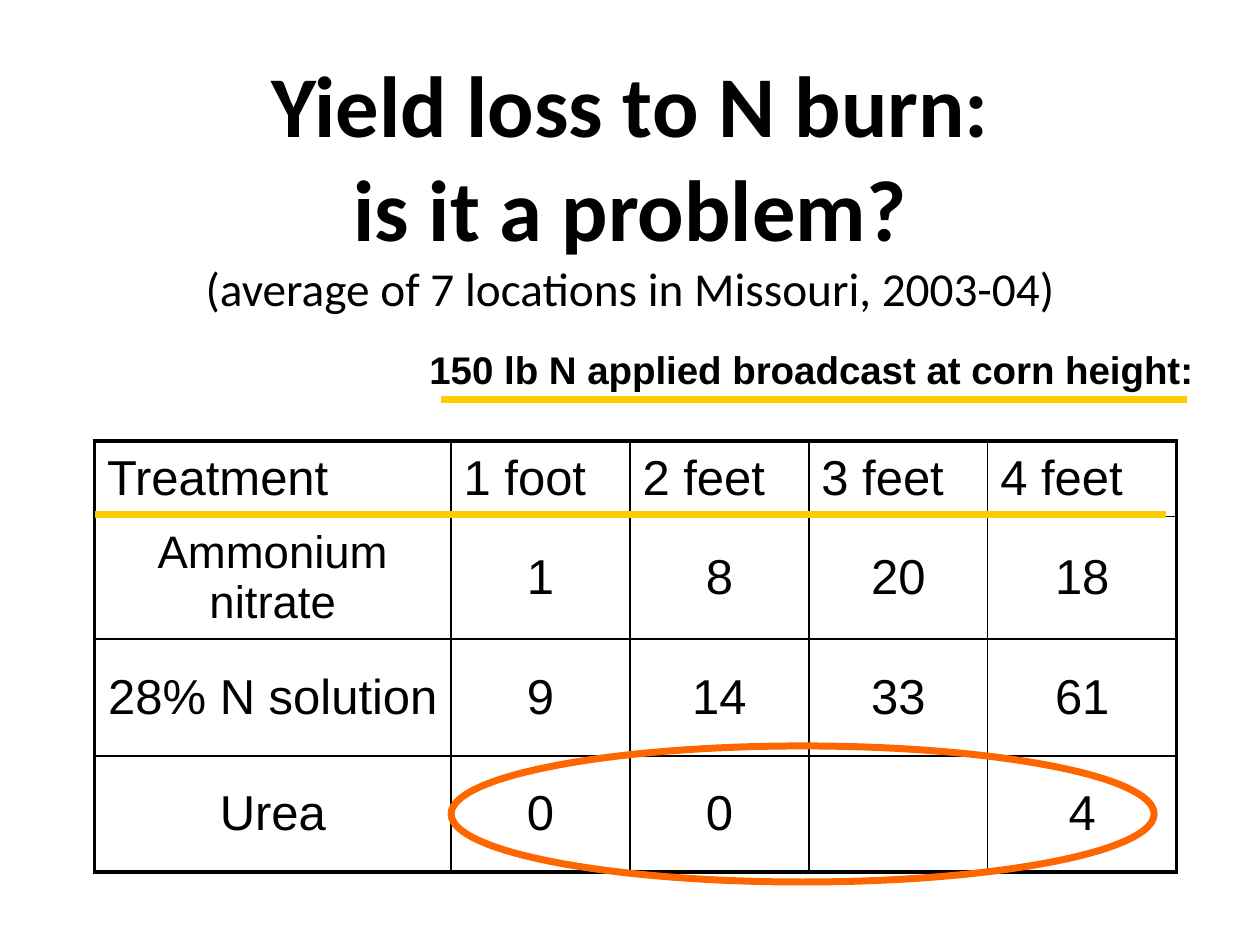
from dataclasses import dataclass

import pptx
import pptx.dml.color
import pptx.enum.shapes
import pptx.enum.text
import pptx.oxml
import pptx.oxml.ns
import pptx.util
from pptx.dml.color import RGBColor
from pptx.util import Inches

BLACK = RGBColor(0x00, 0x00, 0x00)
GOLD = RGBColor(0xFF, 0xCC, 0x00)
ORANGE = RGBColor(0xFF, 0x66, 0x00)
ACCENT_WIDTH = pptx.util.Pt(4)
OUTER_WIDTH, INNER_WIDTH = 2.25, 1
LEFT = pptx.enum.text.PP_ALIGN.LEFT
CENTER = pptx.enum.text.PP_ALIGN.CENTER
MIDDLE = pptx.enum.text.MSO_ANCHOR.MIDDLE

COLUMNS = (2.83, 1.42, 1.42, 1.42, 1.5)
ROWS = (0.6, 0.97, 0.93, 0.92)
YIELD_LOSS = (
    ("Treatment", "1 foot", "2 feet", "3 feet", "4 feet"),
    ("Ammonium nitrate", "1", "8", "20", "18"),
    ("28% N solution", "9", "14", "33", "61"),
    ("Urea", "0", "0", "", "4"),
)


@dataclass
class Rule:
    left: float
    right: float
    y: float


HEADER_RULE = Rule(0.75, 9.25, 4.08)
CAPTION_RULE = Rule(3.5, 9.42, 3.17)


def style_font(font, name: str, size: float, bold: bool = False) -> None:
    font.name = name
    font.size = pptx.util.Pt(size)
    font.bold = bold
    font.color.rgb = BLACK


def add_title(slide) -> None:
    s = slide.shapes.add_textbox(Inches(0.75), Inches(0.33), Inches(8.5), Inches(2.25))
    tf = s.text_frame
    tf.word_wrap = True
    tf.vertical_anchor = MIDDLE
    p = tf.paragraphs[0]
    p.alignment = CENTER
    for line in ("Yield loss to N burn:", "is it a problem?"):
        r = p.add_run()
        r.text = line
        style_font(r.font, "Calibri", 49.5, True)
        p.add_line_break()
    r = p.add_run()
    r.text = "(average of 7 locations in Missouri, 2003-04)"
    style_font(r.font, "Calibri", 27)


def add_caption(slide) -> None:
    s = slide.shapes.add_textbox(Inches(3.31), Inches(2.7), Inches(6.94), Inches(0.47))
    tf = s.text_frame
    tf.word_wrap = True
    p = tf.paragraphs[0]
    p.text = "150 lb N applied broadcast at corn height:"
    style_font(p.font, "Arial", 22, True)


def set_borders(cell, row: int, col: int) -> None:
    outer = {
        "lnL": col == 0,
        "lnR": col == len(COLUMNS) - 1,
        "lnT": row == 0,
        "lnB": row == len(ROWS) - 1,
    }
    props = cell._tc.get_or_add_tcPr()
    for index, (tag, is_outer) in enumerate(outer.items()):
        width = pptx.util.Pt(OUTER_WIDTH if is_outer else INNER_WIDTH)
        props.insert(index, pptx.oxml.parse_xml(
            f'<a:{tag} {pptx.oxml.ns.nsdecls("a")} w="{int(width)}">'
            f'<a:solidFill><a:srgbClr val="{BLACK}"/></a:solidFill></a:{tag}>'
        ))


def add_yield_table(slide) -> None:
    table = slide.shapes.add_table(
        len(ROWS), len(COLUMNS), Inches(0.75), Inches(3.5),
        Inches(sum(COLUMNS)), Inches(sum(ROWS)),
    ).table
    table.first_row = False
    table.horz_banding = False
    for column, width in zip(table.columns, COLUMNS):
        column.width = Inches(width)
    for row, height in zip(table.rows, ROWS):
        row.height = Inches(height)
    for i, values in enumerate(YIELD_LOSS):
        for j, value in enumerate(values):
            cell = table.cell(i, j)
            cell.vertical_anchor = MIDDLE
            cell.fill.background()
            set_borders(cell, i, j)
            p = cell.text_frame.paragraphs[0]
            p.text = value
            p.alignment = LEFT if i == 0 else CENTER
            style_font(p.font, "Arial", 26 if (i, j) == (1, 0) else 28)


def add_rule(slide, rule: Rule) -> None:
    s = slide.shapes.add_connector(
        pptx.enum.shapes.MSO_CONNECTOR.STRAIGHT,
        Inches(rule.left), Inches(rule.y), Inches(rule.right), Inches(rule.y),
    )
    s.line.color.rgb = GOLD
    s.line.width = ACCENT_WIDTH
    s._element.spPr.append(
        pptx.oxml.parse_xml(f'<a:effectLst {pptx.oxml.ns.nsdecls("a")}/>')
    )


def add_urea_highlight(slide) -> None:
    s = slide.shapes.add_shape(
        pptx.enum.shapes.MSO_SHAPE.OVAL,
        Inches(3.58), Inches(5.92), Inches(5.58), Inches(1.08),
    )
    s.shadow.inherit = False
    s.fill.background()
    s.line.color.rgb = ORANGE
    s.line.width = ACCENT_WIDTH


def main() -> None:
    prs = pptx.Presentation()
    prs.slide_width = Inches(10)
    prs.slide_height = Inches(7.5)
    slide = prs.slides.add_slide(prs.slide_layouts[6])
    add_title(slide)
    add_yield_table(slide)
    add_rule(slide, HEADER_RULE)
    add_caption(slide)
    add_rule(slide, CAPTION_RULE)
    add_urea_highlight(slide)
    prs.save("out.pptx")


if __name__ == "__main__":
    main()
